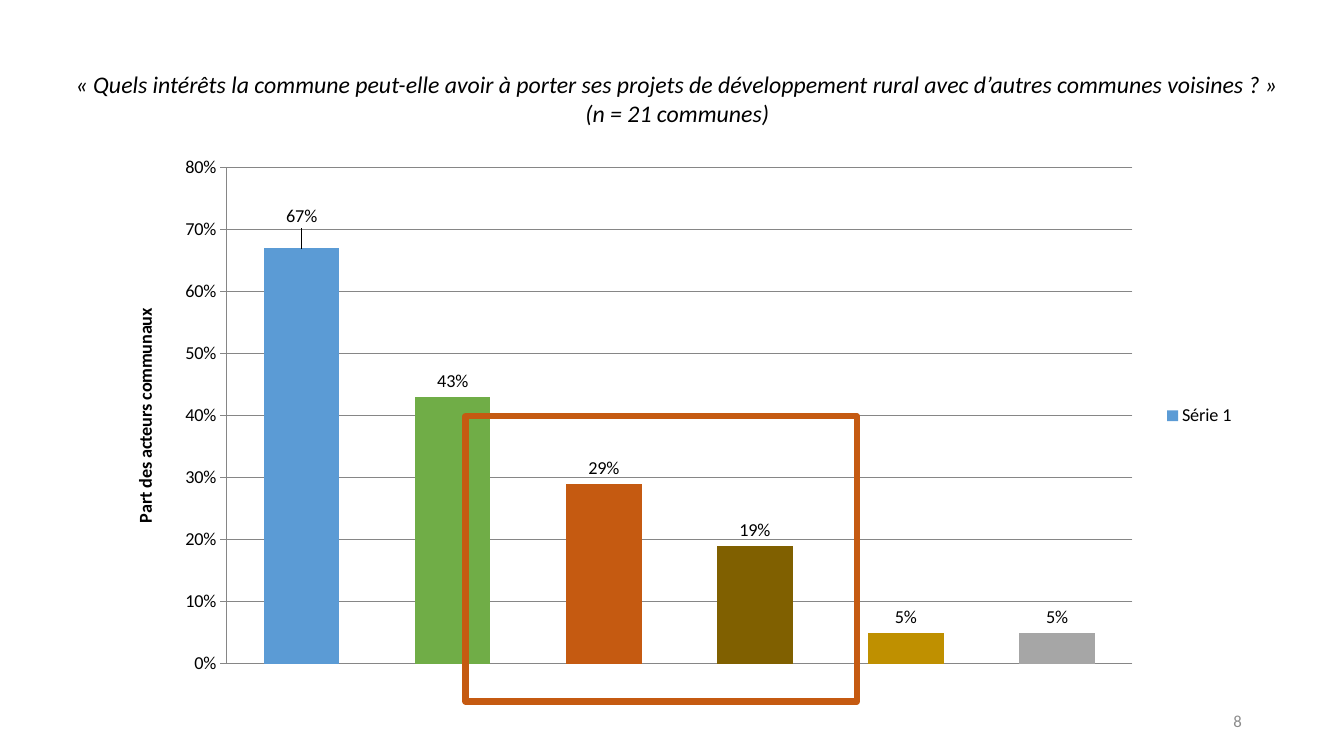
import pptx
import pptx.util
import pptx.chart.data
import pptx.dml.color
import pptx.enum.chart
import pptx.enum.shapes
import pptx.enum.text
import pptx.oxml

Pt = pptx.util.Pt
enum = pptx.enum

HUES = {"ink": "000000", "blue": "5B9BD5", "green": "70AD47", "rust": "C55A11",
        "brown": "806000", "gold": "BF9000", "grey": "A6A6A6",
        "page": "8C8C8C", "grid": "868686"}
FONT = "Calibri"
TITLE = ("« Quels intérêts la commune peut-elle avoir à porter ses projets de "
         "développement rural avec d’autres communes voisines ? » (n = 21 communes)")
AXIS = "Part des acteurs communaux"
SERIES = "Série 1"
BARS = [("1", 0.67, "blue"), ("2", 0.43, "green"), ("3", 0.29, "rust"),
        ("4", 0.19, "brown"), ("5", 0.05, "gold"), ("6", 0.05, "grey")]
PLOT = {"x": 0.1, "y": 0.04, "w": 0.8, "h": 0.92}


def hue(name):
    return pptx.dml.color.RGBColor.from_string(HUES[name])


def style(font, size, name="ink", bold=False, italic=False):
    font.name, font.size = FONT, Pt(size)
    font.bold, font.italic = bold, italic
    font.color.rgb = hue(name)


def paint(fill, name):
    fill.solid()
    fill.fore_color.rgb = hue(name)


def write(slide, box, text, align, size, name, italic=False):
    frame = slide.shapes.add_textbox(*map(Pt, box)).text_frame
    frame.word_wrap = True
    frame.vertical_anchor = enum.text.MSO_ANCHOR.MIDDLE
    para = frame.paragraphs[0]
    para.text, para.alignment = text, align
    style(para.font, size, name, italic=italic)


def layout(spots, inner=False):
    ns = "http://schemas.openxmlformats.org/drawingml/2006/chart"
    modes = "".join(f'<c:{k}Mode val="edge"/>' for k in "xy") if inner else ""
    target = '<c:layoutTarget val="inner"/>' if inner else ""
    parts = "".join(f'<c:{k} val="{v}"/>' for k, v in spots.items())
    return pptx.oxml.parse_xml(
        f'<c:layout xmlns:c="{ns}"><c:manualLayout>{target}{modes}{parts}'
        '</c:manualLayout></c:layout>')


def add_bars(slide, box):
    data = pptx.chart.data.CategoryChartData(number_format="0%")
    data.categories = [bar[0] for bar in BARS]
    data.add_series(SERIES, [bar[1] for bar in BARS])
    kind = enum.chart.XL_CHART_TYPE.COLUMN_CLUSTERED
    chart = slide.shapes.add_chart(kind, *map(Pt, box), data).chart
    style(chart.font, 13)
    chart.has_title = False
    chart.has_legend = True
    chart.legend.position = enum.chart.XL_LEGEND_POSITION.RIGHT
    chart.legend.include_in_layout = False
    chart.category_axis.visible = False

    axis = chart.value_axis
    axis.minimum_scale, axis.maximum_scale, axis.major_unit = 0, 0.8, 0.1
    axis.major_tick_mark = enum.chart.XL_TICK_MARK.OUTSIDE
    axis.tick_labels.number_format = "0%"
    axis.tick_labels.number_format_is_linked = False
    for line in (axis.format.line, axis.major_gridlines.format.line):
        line.color.rgb = hue("grid")
        line.width = Pt(0.75)
    para = axis.axis_title.text_frame.paragraphs[0]
    para.text = AXIS
    style(para.font, 13, bold=True)

    plot = chart.plots[0]
    plot.gap_width = 100
    plot.vary_by_categories = False
    series = plot.series[0]
    paint(series.format.fill, BARS[0][2])
    for i, bar in enumerate(BARS[1:], 1):
        paint(series.points[i].format.fill, bar[2])
    labels = series.data_labels
    labels.show_value = True
    labels.number_format = "0%"
    labels.number_format_is_linked = False
    labels.position = enum.chart.XL_LABEL_POSITION.OUTSIDE_END
    style(labels.font, 13)

    first = series.points[0].data_label
    style(first.font, 13)
    first.position = enum.chart.XL_LABEL_POSITION.OUTSIDE_END
    tag = labels._element.xpath("c:dLbl")[0]
    tag.insert(1, layout({"x": 0, "y": -0.03}))
    area = chart._chartSpace.chart.plotArea
    for old in area.xpath("c:layout"):
        area.remove(old)
    area.insert(0, layout(PLOT, True))


def add_frame(slide, box):
    rect = enum.shapes.MSO_SHAPE.RECTANGLE
    frame = slide.shapes.add_shape(rect, *map(Pt, box))
    frame.shadow.inherit = False
    frame.fill.background()
    frame.line.color.rgb = hue("rust")
    frame.line.width = Pt(4.5)


def main():
    deck = pptx.Presentation()
    deck.slide_width, deck.slide_height = Pt(960), Pt(540)
    slide = deck.slides.add_slide(deck.slide_layouts[6])
    align = enum.text.PP_ALIGN
    write(slide, (43.2, 46.1, 881.3, 48.2), TITLE, align.CENTER, 17, "ink", True)
    add_bars(slide, (80.6, 104.4, 809.3, 385.2))
    write(slide, (678.2, 500.4, 216, 28.8), "8", align.RIGHT, 12, "page")
    add_frame(slide, (332.6, 297.4, 279.4, 203.8))
    deck.save("out.pptx")


if __name__ == "__main__":
    main()
